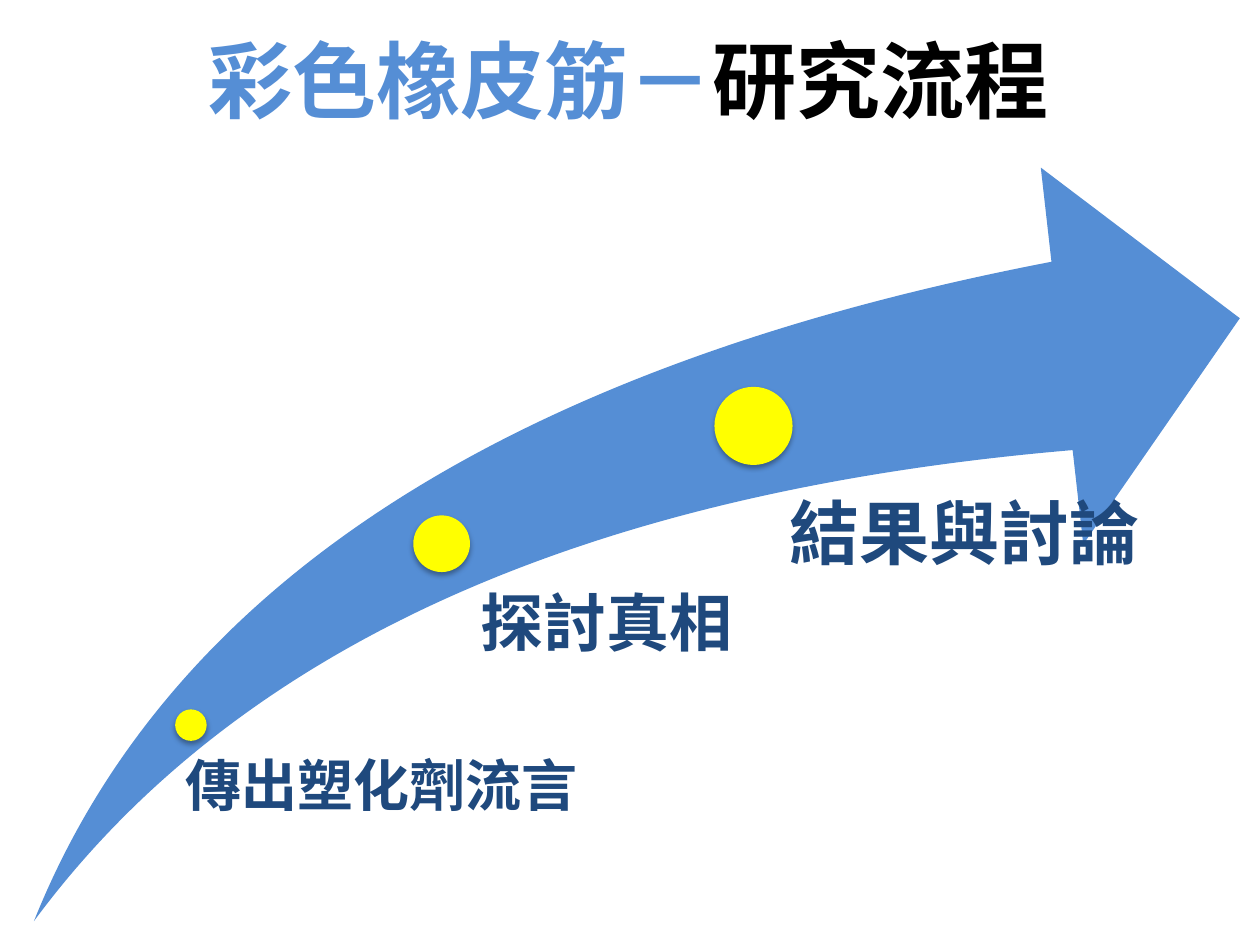
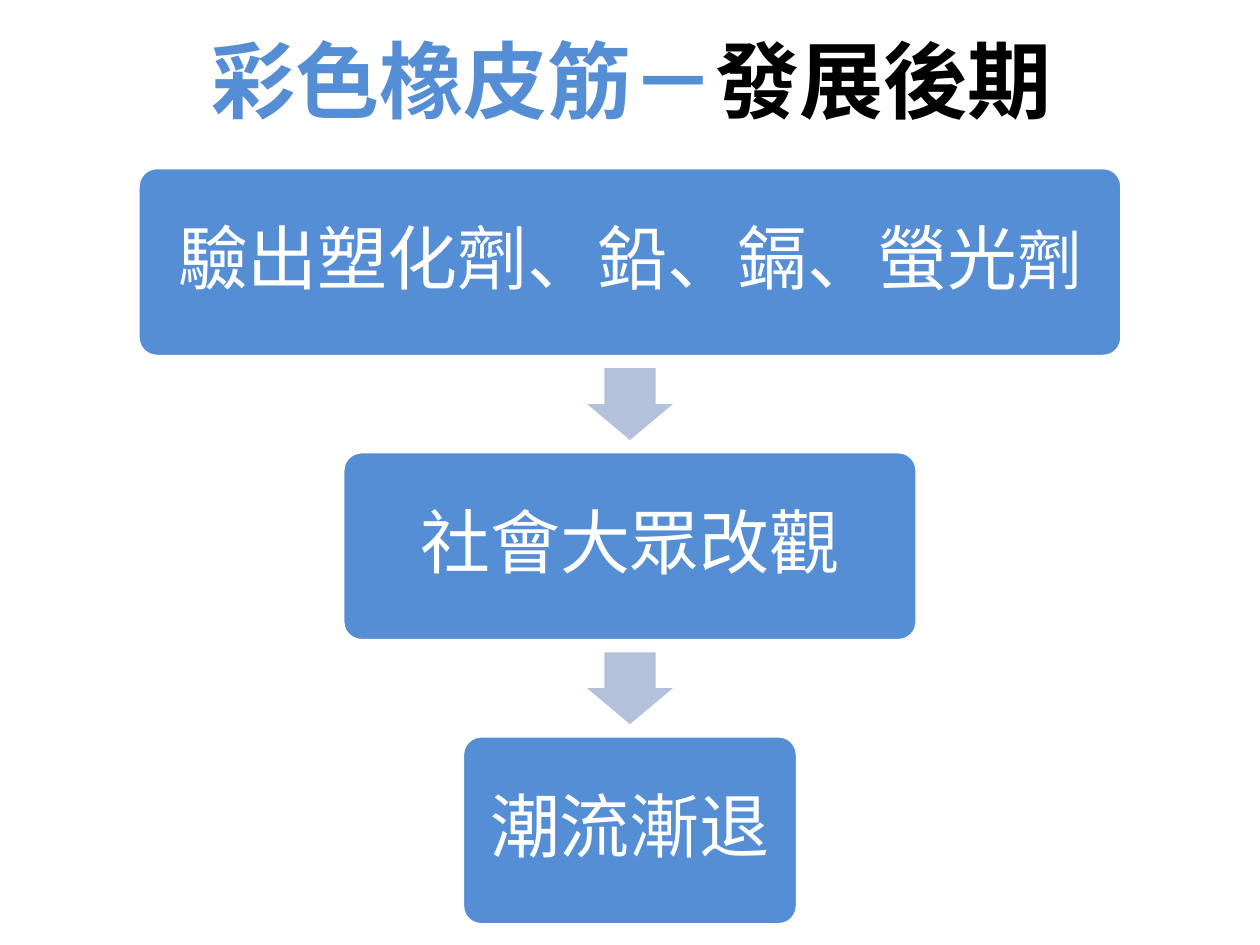
from dataclasses import dataclass

import pptx
import pptx.dml.color
import pptx.enum.shapes
import pptx.enum.text
import pptx.oxml.ns
import pptx.util
from lxml import etree

Inches = pptx.util.Inches
SHAPE = pptx.enum.shapes.MSO_SHAPE
ALIGN = pptx.enum.text.PP_ALIGN
ANCHOR = pptx.enum.text.MSO_ANCHOR


@dataclass(frozen=True)
class Theme:
    font: str = "Noto Sans CJK SC"
    blue: str = "558ED5"
    navy: str = "1F497D"
    yellow: str = "FFFF00"
    pale_blue: str = "B3C1DB"
    black: str = "000000"
    white: str = "FFFFFF"
    title_size: int = 48
    step_size: int = 40
    step_end_size: int = 37


THEME = Theme()
TOPIC = "彩色橡皮筋－"

# dot left, top, diameter; label left, top, width, height; label inset, size, alignment, text
MILESTONES = [
    ((1.39, 5.63, 0.25), (1.09, 6.02, 3.86, 0.85), 0.38, 32, ALIGN.LEFT, "傳出塑化劑流言"),
    ((3.28, 4.09, 0.45), (3.2, 4.7, 2.98, 1.71), 0.24, 36, ALIGN.CENTER, "探討真相"),
    ((5.67, 3.07, 0.62), (5.94, 3.96, 3.27, 2.05), 0.33, 40, ALIGN.LEFT, "結果與討論"),
]

# box width and its (text, size) parts
STEPS = [
    (7.81, [("驗出塑化劑、鉛、鎘、螢光", THEME.step_size), ("劑", THEME.step_end_size)]),
    (4.56, [("社會大眾改觀", THEME.step_size)]),
    (2.66, [("潮流漸退", THEME.step_size)]),
]
FIRST_STEP_TOP, LAST_STEP_TOP, STEP_HEIGHT = 1.33, 5.84, 1.5
ARROW_WIDTH, ARROW_HEIGHT = 0.68, 0.57
CENTER = 5


def rgb(color):
    return pptx.dml.color.RGBColor.from_string(color)


def apply_format(target, values):
    for name, value in values.items():
        setattr(target, name, value)


def write_text(shape, runs, align=ALIGN.CENTER, line_spacing=0.9, **frame_format):
    """Fill a shape with one paragraph of (text, size, color, bold) runs."""
    apply_format(shape.text_frame, {"word_wrap": True, **frame_format})
    paragraph = shape.text_frame.paragraphs[0]
    apply_format(paragraph, {"alignment": align, "line_spacing": line_spacing})
    for text, size, color, bold in runs:
        run = paragraph.add_run()
        run.text = text
        run.font.color.rgb = rgb(color)
        apply_format(run.font, {"size": pptx.util.Pt(size), "bold": bold, "name": THEME.font})
        east_asian = etree.SubElement(run.font._element, pptx.oxml.ns.qn("a:ea"))
        east_asian.set("typeface", THEME.font)


def add_text_box(slide, box, runs, **text_format):
    shape = slide.shapes.add_textbox(*map(Inches, box))
    write_text(shape, runs, **text_format)


def add_filled_shape(slide, kind, box, color, adjustments=(), line_color=None):
    shape = slide.shapes.add_shape(kind, *map(Inches, box))
    shape.shadow.inherit = False
    shape.fill.solid()
    shape.fill.fore_color.rgb = rgb(color)
    for index, value in enumerate(adjustments):
        shape.adjustments[index] = value
    if line_color:
        shape.line.color.rgb = rgb(line_color)
        shape.line.width = pptx.util.Pt(2)
    else:
        shape.line.fill.background()
    return shape


def add_soft_shadow(shape):
    effects = shape._element.spPr.find(pptx.oxml.ns.qn("a:effectLst"))
    shadow = etree.SubElement(effects, pptx.oxml.ns.qn("a:outerShdw"))
    settings = {"blurRad": pptx.util.Pt(3.1), "dist": pptx.util.Pt(1.8),
                "dir": 90 * 60000, "rotWithShape": 0}
    for name, value in settings.items():
        shadow.set(name, str(value))
    color = etree.SubElement(shadow, pptx.oxml.ns.qn("a:srgbClr"), val=THEME.black)
    etree.SubElement(color, pptx.oxml.ns.qn("a:alpha"), val="35000")


def add_titled_slide(presentation, subject, left):
    slide = presentation.slides.add_slide(presentation.slide_layouts[6])
    runs = [(TOPIC, THEME.title_size, THEME.blue, True),
            (subject, THEME.title_size, THEME.black, True)]
    add_text_box(slide, (left, 0, 8.17, 1.25), runs,
                 line_spacing=1.0, vertical_anchor=ANCHOR.MIDDLE)
    return slide


def add_milestone(slide, dot, label_box, inset, size, align, text):
    left, top, diameter = dot
    circle = add_filled_shape(slide, SHAPE.OVAL, (left, top, diameter, diameter), THEME.yellow)
    add_soft_shadow(circle)
    add_text_box(slide, label_box, [(text, size, THEME.navy, True)], align=align,
                 margin_left=Inches(inset), margin_top=0, margin_right=0, margin_bottom=0)


def add_step(slide, top, width, parts):
    box = add_filled_shape(slide, SHAPE.ROUNDED_RECTANGLE,
                           (CENTER - width / 2, top, width, STEP_HEIGHT),
                           THEME.blue, [0.1], THEME.white)
    sides = ("left", "top", "right", "bottom")
    margins = {f"margin_{side}": Inches(0.17) for side in sides}
    runs = [(text, size, THEME.white, False) for text, size in parts]
    write_text(box, runs, vertical_anchor=ANCHOR.MIDDLE, **margins)


def add_process_slide(presentation):
    slide = add_titled_slide(presentation, "研究流程", 0.9)
    add_filled_shape(slide, SHAPE.SWOOSH_ARROW, (0.27, 1.33, 9.57, 5.98),
                     THEME.blue, [0.25, 0.25])
    for milestone in MILESTONES:
        add_milestone(slide, *milestone)


def add_later_stage_slide(presentation):
    slide = add_titled_slide(presentation, "發展後期", 0.93)
    pitch = (LAST_STEP_TOP - FIRST_STEP_TOP) / (len(STEPS) - 1)
    arrow_offset = (pitch + STEP_HEIGHT - ARROW_HEIGHT) / 2
    for index, (width, parts) in enumerate(STEPS):
        top = FIRST_STEP_TOP + index * pitch
        add_step(slide, top, width, parts)
        if index < len(STEPS) - 1:
            arrow_box = (CENTER - ARROW_WIDTH / 2, top + arrow_offset, ARROW_WIDTH, ARROW_HEIGHT)
            add_filled_shape(slide, SHAPE.DOWN_ARROW, arrow_box, THEME.pale_blue, [0.6, 0.5])


def main():
    presentation = pptx.Presentation()
    apply_format(presentation, {"slide_width": Inches(10), "slide_height": Inches(7.5)})
    add_process_slide(presentation)
    add_later_stage_slide(presentation)
    presentation.save("out.pptx")


if __name__ == "__main__":
    main()
